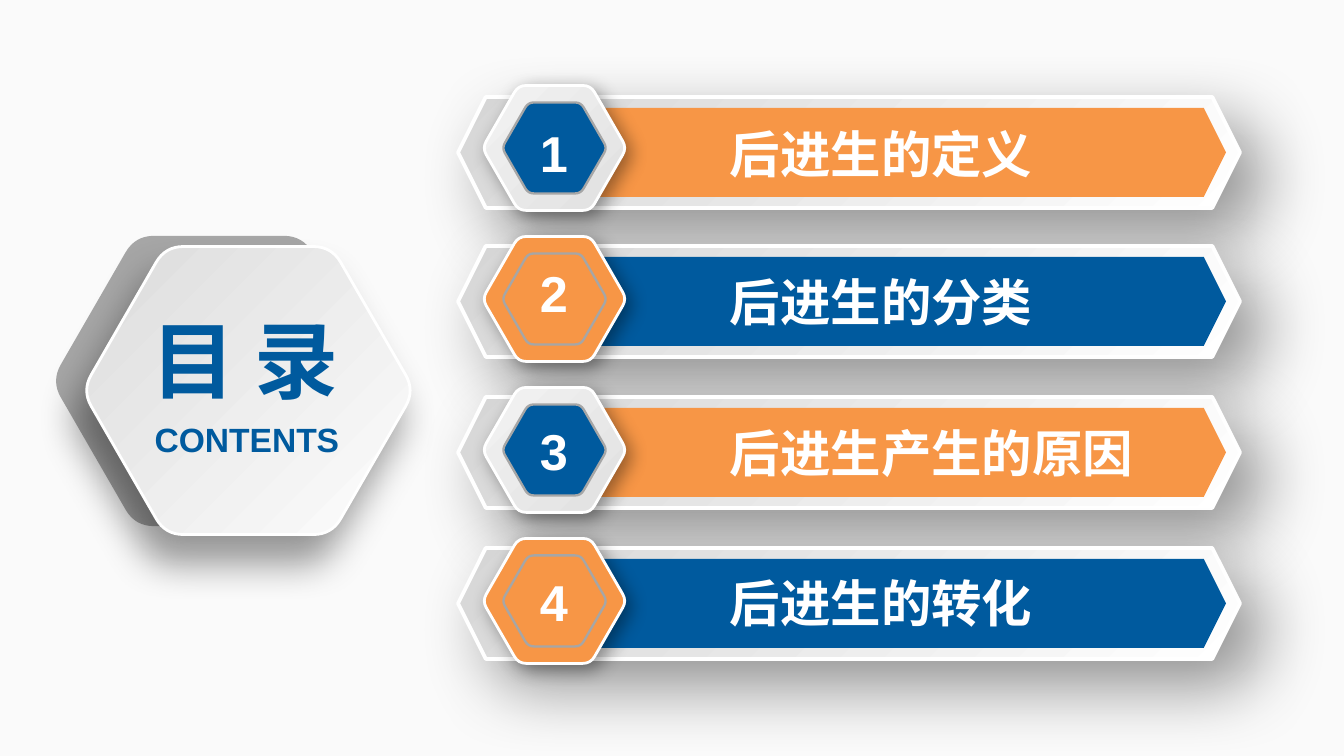
from dataclasses import dataclass
from math import cos, pi, sin, sqrt

from lxml.etree import SubElement
from pptx import Presentation
from pptx.dml.color import RGBColor
from pptx.enum.shapes import MSO_SHAPE
from pptx.enum.text import MSO_ANCHOR, MSO_AUTO_SIZE, PP_ALIGN
from pptx.oxml.ns import qn
from pptx.util import Emu, Pt

TITLE = "目 录"
SUBTITLE = "CONTENTS"
# label, plain (single-colour) badge, filled numeral box, tops of bar, label and numeral in px
CHAPTERS = [
    ("后进生的定义", False, False, 97, 118, 117),
    ("后进生的分类", True, False, 246, 266, 257),
    ("后进生产生的原因", False, False, 397, 417, 415),
    ("后进生的转化", True, True, 548, 567, 566),
]


@dataclass(frozen=True)
class Theme:
    font: str = "Arial"
    blue: str = "005A9E"
    orange: str = "F79646"
    white: str = "FFFFFF"
    grey: str = "A6A6A6"
    background: tuple = ("FAFAFA", "FCFCFC", 90)
    bar: tuple = ("FFFFFF", "D6D6D6", 225)
    panel: tuple = ("DCDCDC", "FDFDFD", 45)
    badge: tuple = ("F2F2F2", "E1E1E1", 45)
    title_size: int = 45
    label_size: int = 27
    subtitle_size: int = 18


THEME = Theme()
# opacity %, blur pt, distance pt, direction in degrees
BAR_SHADOW = (42, 38, 19, 45)
PANEL_SHADOW = (40, 21, 16, 113)
BADGE_SHADOW = (40, 10, 4, 45)

WIDTH, HEIGHT = 1344, 756
SCALE = 9144000 / WIDTH
BADGE_TOP, BADGE_PITCH = 148, 151
CORNER_CUT = 0.11


def px(value):
    return Emu(round(value * SCALE))


def paint(fill, colour):
    """Fill with one colour, or with (start, end, clockwise angle)."""
    if isinstance(colour, str):
        fill.solid()
        fill.fore_color.rgb = RGBColor.from_string(colour)
        return
    *ends, angle = colour
    fill.gradient()
    fill.gradient_angle = 360 - angle
    for stop, end, position in zip(fill.gradient_stops, ends, (0, 1)):
        stop.color.rgb = RGBColor.from_string(end)
        stop.position = position


def style(shape, colour, line=None, shadow=None):
    paint(shape.fill, colour)
    if line:
        line_colour, line_width = line
        paint(shape.line.fill, line_colour)
        shape.line.width = Pt(line_width)
    else:
        shape.line.fill.background()
    shape.shadow.inherit = False
    if shadow:
        opacity, blur, distance, direction = shadow
        effects = shape.element.spPr.find(qn("a:effectLst"))
        outer = SubElement(effects, qn("a:outerShdw"), {
            "blurRad": str(Pt(blur)), "dist": str(Pt(distance)),
            "dir": str(direction * 60000), "algn": "tl", "rotWithShape": "0"})
        black = SubElement(outer, qn("a:srgbClr"), val="000000")
        SubElement(black, qn("a:alpha"), val=str(opacity * 1000))


def add_bar(page, box, *look):
    style(page.shapes.add_shape(MSO_SHAPE.HEXAGON, *map(px, box)), *look)


def bend_corners(shape):
    """Turn each corner's start, middle and end points into one quadratic curve."""
    outline = next(shape.element.iter(qn("a:pathLst")))[0]
    steps = [step for step in outline if len(step)]
    for k in range(0, len(steps), 3):
        start, middle, end = (step[0] for step in steps[k:k + 3])
        control = {axis: str(round(2 * int(middle.get(axis))
                                   - (int(start.get(axis)) + int(end.get(axis))) / 2))
                   for axis in "xy"}
        curve = SubElement(outline, qn("a:quadBezTo"))
        SubElement(curve, qn("a:pt"), control)
        curve.append(end)
        outline.replace(steps[k + 1], curve)
        outline.remove(steps[k + 2])


def add_rounded_hexagon(shapes, center, height, *look):
    side = height / sqrt(3)
    corners = [(center[0] + side * cos(k * pi / 3), center[1] + side * sin(k * pi / 3))
               for k in range(6)]
    points = []
    for k, corner in enumerate(corners):
        before, after = corners[k - 1], corners[(k + 1) % 6]
        for to_before, to_after in ((1, 0), (0.25, 0.25), (0, 1)):
            points.append(tuple(
                px(c + CORNER_CUT * (to_before * (b - c) + to_after * (a - c)))
                for b, c, a in zip(before, corner, after)))
    outline = shapes.build_freeform(*points[0], scale=1.0)
    outline.add_line_segments(points[1:], close=True)
    shape = outline.convert_to_shape()
    bend_corners(shape)
    style(shape, *look)


def write(shape, box, text, size, colour, **frame_format):
    """Place a text shape and set its only paragraph."""
    for name, value in zip(("left", "top", "width", "height"), box):
        setattr(shape, name, px(value))
    align = frame_format.pop("align", PP_ALIGN.LEFT)
    settings = {"word_wrap": True, "auto_size": MSO_AUTO_SIZE.SHAPE_TO_FIT_TEXT,
                "vertical_anchor": MSO_ANCHOR.TOP,
                "margin_left": px(10), "margin_right": px(10),
                "margin_top": px(5), "margin_bottom": px(5), **frame_format}
    for name, value in settings.items():
        setattr(shape.text_frame, name, value)
    para = shape.text_frame.paragraphs[0]
    para.alignment = align
    span = para.add_run()
    span.text = text
    for name, value in {"name": THEME.font, "size": Pt(size), "bold": True}.items():
        setattr(span.font, name, value)
    span.font.color.rgb = RGBColor.from_string(colour)


def add_text(page, box, *content, **frame_format):
    write(page.shapes.add_textbox(*map(px, box)), box, *content, **frame_format)


def add_numeral(page, number, top, filled):
    box = (530, top, 48, 71)
    if filled:
        shape = page.shapes.add_shape(MSO_SHAPE.RECTANGLE, *map(px, box))
        style(shape, THEME.orange)
    else:
        shape = page.shapes.add_textbox(*map(px, box))
    write(shape, box, str(number), THEME.label_size, THEME.white, word_wrap=False)


def add_badge(page, index, plain):
    center = (554.5, BADGE_TOP + index * BADGE_PITCH)
    badge = page.shapes.add_group_shape().shapes
    add_rounded_hexagon(badge, center, 125, THEME.orange if plain else THEME.badge,
                        (THEME.white, 1.5), BADGE_SHADOW)
    add_rounded_hexagon(badge, center, 91, THEME.orange if plain else THEME.blue,
                        (THEME.grey, 1.25))


def add_contents_panel(page):
    add_rounded_hexagon(page.shapes, (219, 381), 288, THEME.grey, (THEME.grey, 1.25))
    add_rounded_hexagon(page.shapes, (248.5, 390.5), 288, THEME.panel,
                        (THEME.white, 1.5), PANEL_SHADOW)
    title = page.shapes.title
    title.element.getparent().append(title.element)
    write(title, (138, 301, 241, 116), TITLE, THEME.title_size, THEME.blue,
          margin_left=px(13), margin_right=px(13), margin_top=px(7), margin_bottom=px(7))
    add_text(page, (138, 411, 218, 56), SUBTITLE, THEME.subtitle_size, THEME.blue,
             align=PP_ALIGN.CENTER, vertical_anchor=MSO_ANCHOR.MIDDLE,
             auto_size=MSO_AUTO_SIZE.NONE)


def main():
    deck = Presentation()
    deck.slide_width, deck.slide_height = px(WIDTH), px(HEIGHT)
    page = deck.slides.add_slide(deck.slide_layouts[5])
    paint(page.background.fill, THEME.background)
    for _, plain, _, top, _, _ in CHAPTERS:
        add_bar(page, (458, top, 782, 111), THEME.bar, (THEME.white, 2), BAR_SHADOW)
        add_bar(page, (555, top + 11, 671, 89), THEME.blue if plain else THEME.orange)
    for label, _, _, _, top, _ in CHAPTERS:
        add_text(page, (720, top, 492, 71), label, THEME.label_size, THEME.white)
    add_contents_panel(page)
    for index, (_, plain, filled, _, _, top) in enumerate(CHAPTERS):
        add_badge(page, index, plain)
        add_numeral(page, index + 1, top, filled)
    deck.save("out.pptx")


if __name__ == "__main__":
    main()
